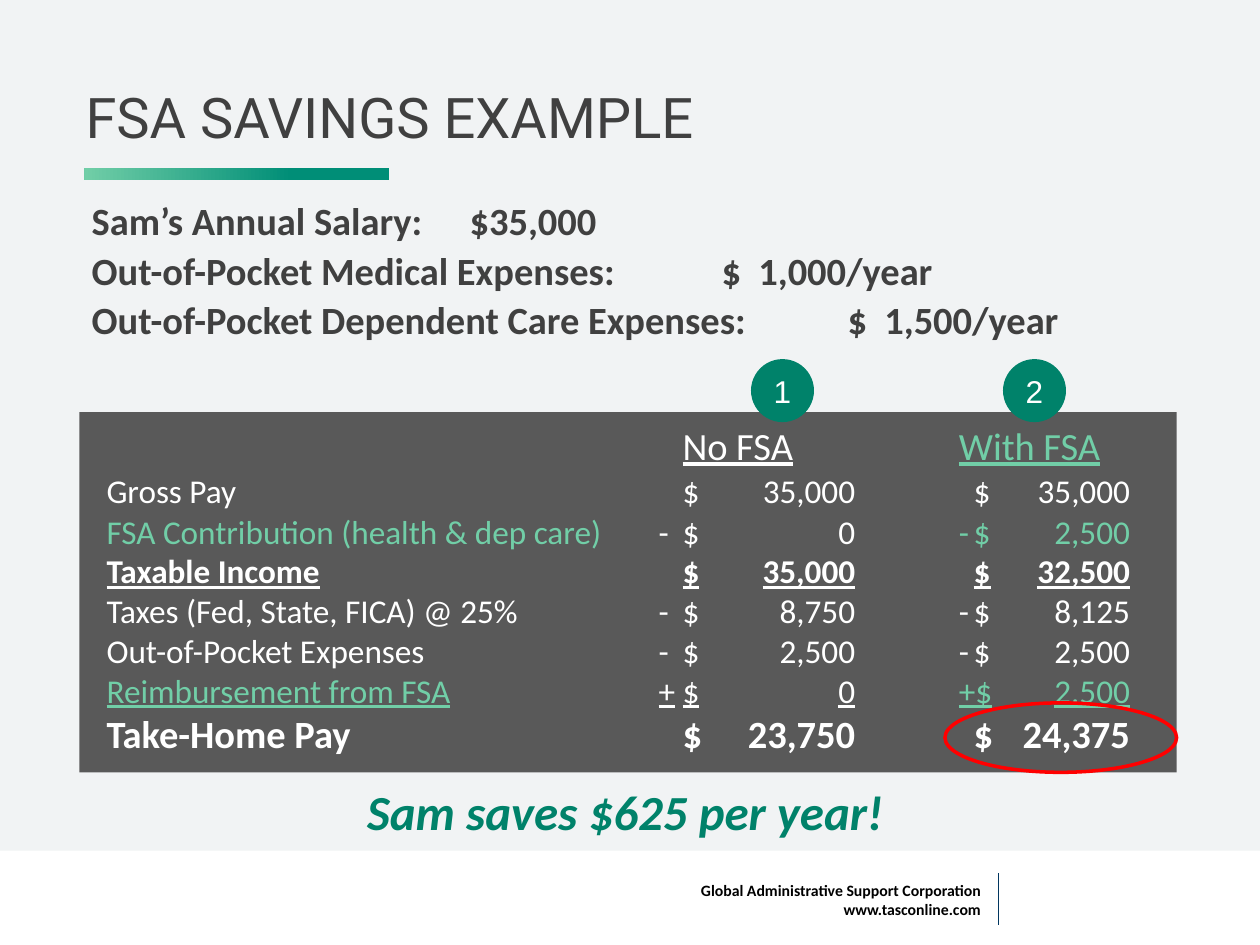
from lxml import etree
from pptx import Presentation, util as u
from pptx.dml.color import RGBColor
from pptx.enum import shapes as es, text as et
from pptx.oxml import ns

PALE = RGBColor(0xF1, 0xF3, 0xF4)
WHITE = RGBColor(0xFF, 0xFF, 0xFF)
BLACK = RGBColor(0, 0, 0)
INK = RGBColor(0x40, 0x40, 0x40)
SLATE = RGBColor(0x59, 0x59, 0x59)
TEAL = RGBColor(0x00, 0x8E, 0x77)
DEEP = RGBColor(0x00, 0x82, 0x6A)
MINT = RGBColor(0x71, 0xCE, 0xA7)
NAVY = RGBColor(0x01, 0x36, 0x5F)
RED = RGBColor(0xFF, 0, 0)

RECT, OVAL = es.MSO_SHAPE.RECTANGLE, es.MSO_SHAPE.OVAL
LEFT, MID, RIGHT = et.PP_ALIGN.LEFT, et.PP_ALIGN.CENTER, et.PP_ALIGN.RIGHT

FACTS = [
    ("Sam’s Annual Salary:\t$35,000", [(7.62, "l")]),
    ("Out-of-Pocket Medical Expenses:\t$\t1,000/year",
     [(12.7, "l"), (13.44, "l")]),
    ("Out-of-Pocket Dependent Care Expenses:\t$\t1,500/year",
     [(15.24, "l"), (15.98, "l")]),
]
STOPS = [(0.3, "l"), (11.43, "l"), (11.91, "l"), (15.39, "r"),
         (17.48, "l"), (17.78, "l"), (20.93, "r")]
BOLD, LINED = {"bold": True}, {"underline": True}
ROWS = [
    [("\t", 24, WHITE, {}), ("\t\t", 20, WHITE, {}),
     ("No FSA", 22, WHITE, LINED), ("\t\t", 22, WHITE, {}),
     ("With FSA", 22, MINT, LINED)],
    [("\t", 20, WHITE, {}),
     ("Gross Pay\t\t$\t35,000\t\t$\t35,000", 19, WHITE, {})],
    [("\tFSA Contribution (health & dep care)", 19, MINT, {}),
     ("\t-\t$\t0\t", 19, WHITE, {}), ("-\t$\t2,500", 19, MINT, {})],
    [("\t", 19, WHITE, {}),
     ("Taxable Income\t\t$\t35,000", 19, WHITE, BOLD | LINED),
     ("\t", 19, WHITE, BOLD), ("\t$\t32,500", 19, WHITE, BOLD | LINED)],
    [("\tTaxes (Fed, State, FICA) @ 25%\t-\t$\t8,750\t-\t$\t8,125",
      19, WHITE, {})],
    [("\tOut-of-Pocket Expenses\t-\t$\t2,500\t-\t$\t2,500", 19, WHITE, {})],
    [("\t", 19, WHITE, {}), ("Reimbursement from FSA", 19, MINT, LINED),
     ("\t+\t$\t0", 19, WHITE, LINED), ("\t", 19, WHITE, {}),
     ("+$\t2,500", 19, MINT, LINED)],
    [("\tTake-Home Pay\t\t$\t23,750\t\t$\t24,375", 22, WHITE, BOLD)],
]


def put(obj, **form):
    """Set each attribute of an object from its format values."""
    for key, val in form.items():
        setattr(obj, key, val)


def span(box):
    """Turn a box in centimetres into lengths."""
    return [u.Cm(n) for n in box]


def write(para, words, size, tint, face="Calibri", **form):
    """Add one formatted run to a paragraph."""
    run = para.add_run()
    run.text = words
    put(run.font, size=u.Pt(size), name=face, **form)
    run.font.color.rgb = tint


def line(frame, first, **form):
    """Return the first or a new paragraph with its format set."""
    para = frame.paragraphs[0] if first else frame.add_paragraph()
    put(para, **form)
    return para


def tabs(para, stops):
    """Give a paragraph its tab stops."""
    group = etree.SubElement(para._p.get_or_add_pPr(), ns.qn("a:tabLst"))
    for pos, side in stops:
        etree.SubElement(group, ns.qn("a:tab"),
                         pos=str(int(u.Cm(pos))), algn=side)


def form(slide, kind, box, fill=None):
    """Add a plain shape without line or shadow."""
    shape = slide.shapes.add_shape(kind, *span(box))
    shape.shadow.inherit = False
    shape.line.fill.background()
    if fill is None:
        shape.fill.background()
    else:
        shape.fill.solid()
        shape.fill.fore_color.rgb = fill
    return shape


def area(slide, box, **style):
    """Add a text box and return its frame."""
    frame = slide.shapes.add_textbox(*span(box)).text_frame
    put(frame, **{"word_wrap": True, **style})
    return frame


def head(slide, box):
    """Place the title and the colour bar beneath it."""
    x, y, w, h = box
    title = slide.shapes.title
    put(title, **dict(zip(("left", "top", "width", "height"), span(box))))
    put(title.text_frame, vertical_anchor=et.MSO_ANCHOR.MIDDLE,
        word_wrap=True)
    para = line(title.text_frame, True, alignment=LEFT)
    write(para, "FSA SAVINGS EXAMPLE", 32, INK, "Roboto")
    bar = form(slide, RECT, (x + 0.23, y + 2.31, 6.14, 0.26), TEAL)
    bar.fill.gradient()
    bar.fill.gradient_angle = 180
    for stop, pos, tint in zip(bar.fill.gradient_stops, (0.32, 1),
                               (TEAL, MINT)):
        stop.position = pos
        stop.color.rgb = tint


def facts(slide, box):
    """List the salary and the expenses."""
    frame = area(slide, box)
    for i, (words, stops) in enumerate(FACTS):
        para = line(frame, i == 0, line_spacing=0.9,
                    space_before=u.Pt(4.4 if i else 0))
        tabs(para, stops)
        write(para, words, 22, INK, bold=True)


def sheet(slide, box):
    """Draw the pay comparison with its column numbers and ring."""
    x, y, w, h = box
    frame = form(slide, RECT, box, SLATE).text_frame
    put(frame, word_wrap=True, vertical_anchor=et.MSO_ANCHOR.TOP)
    for i, row in enumerate(ROWS):
        para = line(frame, i == 0, alignment=LEFT)
        tabs(para, STOPS)
        for words, size, tint, style in row:
            write(para, words, size, tint, **style)
    for i in range(2):
        disc = form(slide, OVAL, (x + 13.54 + 5.08 * i, y - 1.07, 1.27, 1.27),
                    DEEP)
        put(disc.text_frame, margin_left=0, margin_right=0, margin_top=0,
            margin_bottom=0, vertical_anchor=et.MSO_ANCHOR.MIDDLE)
        write(line(disc.text_frame, True, alignment=MID), str(i + 1),
              18, WHITE, "Arial")
    ring = form(slide, OVAL, (x + w - 4.67, y + h - 1.4, 4.67, 1.4))
    ring.line.color.rgb = RED
    ring.line.width = u.Pt(2)


def result(slide, box):
    """State the yearly saving."""
    frame = area(slide, box, vertical_anchor=et.MSO_ANCHOR.MIDDLE)
    para = line(frame, True, alignment=MID, line_spacing=1.3)
    write(para, "Sam saves $625 per year!", 28, DEEP, bold=True, italic=True)


def foot(slide, box):
    """Draw the white footer band with sender and rule."""
    x, y, w, h = box
    form(slide, RECT, box, WHITE)
    frame = area(slide, (x + 12.92, y + 0.48, 7.1, 1.02))
    for i, words in enumerate(("Global Administrative Support Corporation",
                               "www.tasconline.com")):
        write(line(frame, i == 0, alignment=RIGHT), words, 9, BLACK,
              bold=True)
    ends = (x + 20.12, y + 0.45, x + 20.12, y + 1.49)
    rule = slide.shapes.add_connector(es.MSO_CONNECTOR.STRAIGHT, *span(ends))
    rule.line.color.rgb = NAVY
    rule.line.width = u.Pt(0.5)
    etree.SubElement(rule._element.spPr, ns.qn("a:effectLst"))


def main():
    """Build and save the slide."""
    deck = Presentation()
    put(deck, slide_width=u.Cm(25.4), slide_height=u.Cm(19.05))
    slide = deck.slides.add_slide(deck.slide_layouts[5])
    slide.background.fill.solid()
    slide.background.fill.fore_color.rgb = PALE
    foot(slide, (0, 17.15, 25.4, 1.9))
    head(slide, (1.47, 1.07, 22.66, 2.54))
    facts(slide, (1.6, 3.96, 22.4, 3.02))
    sheet(slide, (1.6, 8.31, 22.12, 7.26))
    result(slide, (0, 15.27, 25.2, 1.8))
    deck.save("out.pptx")


if __name__ == "__main__":
    main()
